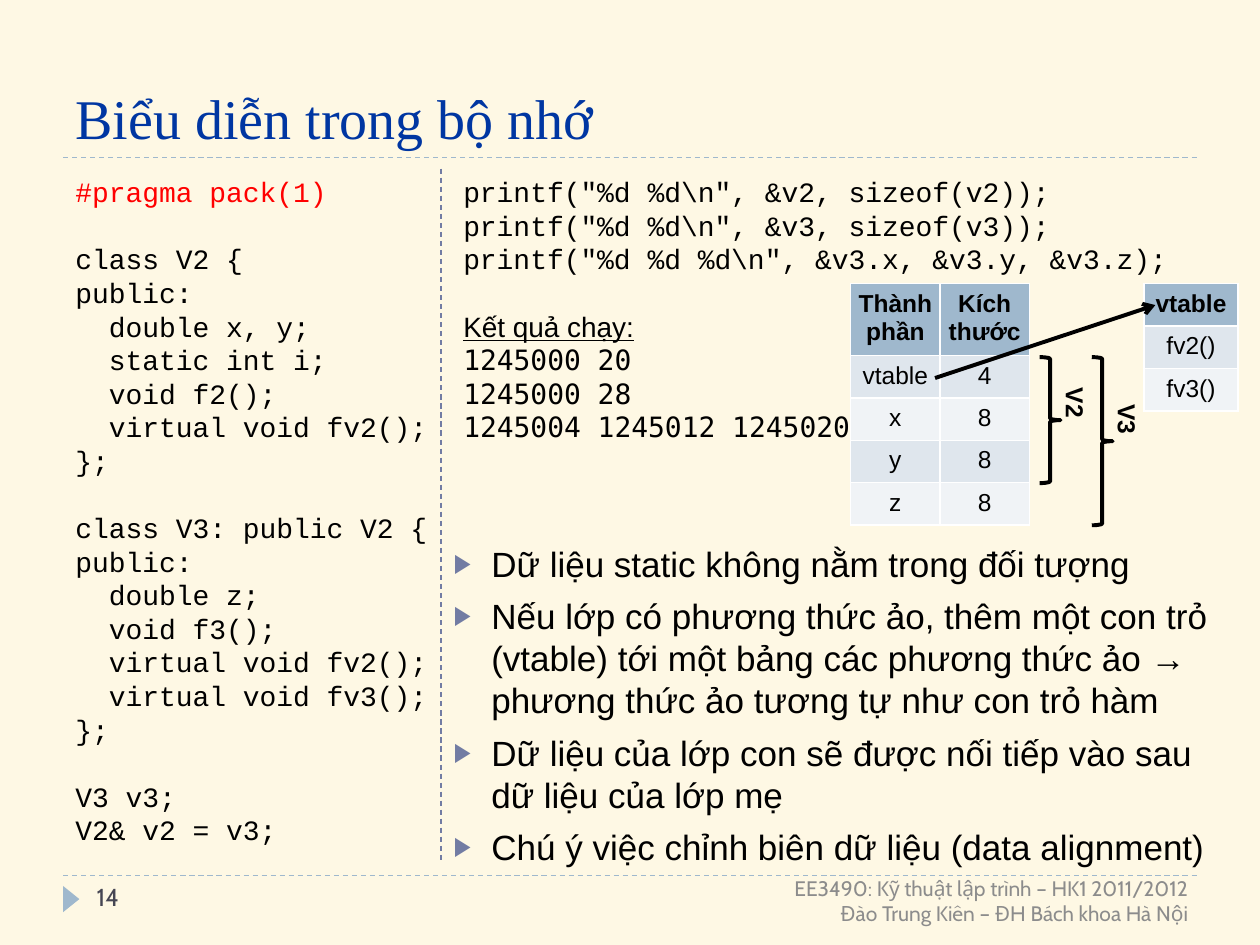
"""Build the slide on the memory layout of C++ objects with virtual methods."""
from lxml import etree
from pptx import Presentation
from pptx.dml.color import RGBColor
from pptx.enum.dml import MSO_LINE
from pptx.enum.shapes import MSO_CONNECTOR, MSO_SHAPE
from pptx.enum.text import MSO_ANCHOR, MSO_AUTO_SIZE, PP_ALIGN
from pptx.oxml.ns import qn
from pptx.util import Cm, Pt

CREAM = RGBColor(0xFE, 0xF8, 0xE4)
NAVY = RGBColor(0x00, 0x36, 0xA2)
BLACK = RGBColor(0x00, 0x00, 0x00)
RED = RGBColor(0xFF, 0x00, 0x00)
SLATE = RGBColor(0x46, 0x46, 0x53)
GRAY = RGBColor(0x8C, 0x8C, 0x8C)
INDIGO = RGBColor(0x72, 0x7C, 0xA3)
BLUE = RGBColor(0x9F, 0xB8, 0xCD)
BANDS = (RGBColor(0xF0, 0xF3, 0xF6), RGBColor(0xDF, 0xE6, 0xED))
DASH = MSO_LINE.DASH
STRAIGHT = MSO_CONNECTOR.STRAIGHT
TRIANGLE = MSO_SHAPE.ISOSCELES_TRIANGLE
BRACE = MSO_SHAPE.RIGHT_BRACE
TOP, MIDDLE, BOTTOM = MSO_ANCHOR.TOP, MSO_ANCHOR.MIDDLE, MSO_ANCHOR.BOTTOM
LEFT, CENTER, RIGHT = PP_ALIGN.LEFT, PP_ALIGN.CENTER, PP_ALIGN.RIGHT
NO_FIT = MSO_AUTO_SIZE.NONE
CODE_PITCH = Pt(19.2)

CLASS_CODE = """#pragma pack(1)

class V2 {
public:
  double x, y;
  static int i;
  void f2();
  virtual void fv2();
};

class V3: public V2 {
public:
  double z;
  void f3();
  virtual void fv2();
  virtual void fv3();
};

V3 v3;
V2& v2 = v3;"""

OUTPUT_CODE = r"""printf("%d %d\n", &v2, sizeof(v2));
printf("%d %d\n", &v3, sizeof(v3));
printf("%d %d %d\n", &v3.x, &v3.y, &v3.z);

Kết quả chạy:
1245000 20
1245000 28
1245004 1245012 1245020"""

NOTES = [
    "Dữ liệu static không nằm trong đối tượng",
    "Nếu lớp có phương thức ảo, thêm một con trỏ (vtable) tới một bảng các "
    "phương thức ảo → phương thức ảo tương tự như con trỏ hàm",
    "Dữ liệu của lớp con sẽ được nối tiếp vào sau dữ liệu của lớp mẹ",
    "Chú ý việc chỉnh biên dữ liệu (data alignment)",
]

prs = Presentation()
prs.slide_width, prs.slide_height = Cm(25.4), Cm(19.05)
slide = prs.slides.add_slide(prs.slide_layouts[1])
slide.background.fill.solid()
slide.background.fill.fore_color.rgb = CREAM


def add_text(box, text, font, size, color, align=LEFT, pitch=None):
    """Add a text box; with a pitch, an empty line becomes space before the next."""
    frame = slide.shapes.add_textbox(*map(Cm, box)).text_frame
    frame.word_wrap = True
    lines = text.split("\n")
    kept = [i for i, line in enumerate(lines) if line]
    frame.text = "\n".join(lines[i] for i in kept)
    for i, paragraph in zip(kept, frame.paragraphs):
        paragraph.alignment = align
        if pitch:
            paragraph.line_spacing = pitch
            if i and not lines[i - 1]:
                paragraph.space_before = pitch
        for run in paragraph.runs:
            run.font.name, run.font.size = font, Pt(size)
            run.font.color.rgb = color
    return frame


def add_line(x1, y1, x2, y2, color, width):
    """Add a straight line without shadow."""
    line = slide.shapes.add_connector(STRAIGHT, Cm(x1), Cm(y1), Cm(x2), Cm(y2))
    line.line.color.rgb = color
    line.line.width = Pt(width)
    etree.SubElement(line._element.spPr, qn("a:effectLst"))
    return line


for rule_y in (17.65, 3.18):
    add_line(1.27, rule_y, 24.13, rule_y, BLUE, 0.75).line.dash_style = DASH

page_marker = slide.shapes.add_shape(TRIANGLE, Cm(1.17), Cm(17.96), Cm(0.53), Cm(0.33))
page_marker.rotation = 90
page_marker.shadow.inherit = False
page_marker.fill.solid()
page_marker.fill.fore_color.rgb = BLUE
page_marker.line.fill.background()

title = slide.shapes.title
title.left, title.top, title.width, title.height = Cm(1.27), Cm(0.43), Cm(22.86), Cm(2.74)
title.text_frame.text = "Biểu diễn trong bộ nhớ"
title.text_frame.vertical_anchor = BOTTOM
title.text_frame.auto_size = NO_FIT
heading = title.text_frame.paragraphs[0]
heading.alignment = LEFT
heading.runs[0].font.name, heading.runs[0].font.size = "Times New Roman", Pt(32)
heading.runs[0].font.color.rgb = NAVY

notes = slide.placeholders[1]
notes.left, notes.top, notes.width, notes.height = Cm(8.89), Cm(10.8), Cm(16.08), Cm(6.3)
notes.text_frame.text = "\n".join(NOTES)
notes.text_frame.vertical_anchor = TOP
notes.text_frame.auto_size = NO_FIT
for i, note in enumerate(notes.text_frame.paragraphs):
    props = note._p.get_or_add_pPr()
    props.set("marL", str(Cm(0.76)))
    props.set("indent", str(-Cm(0.76)))
    bullet_color = etree.SubElement(props, qn("a:buClr"))
    etree.SubElement(bullet_color, qn("a:srgbClr"), val=str(INDIGO))
    etree.SubElement(props, qn("a:buSzPct"), val="76000")
    etree.SubElement(props, qn("a:buChar"), char="▶")
    note.space_before = Pt(6 if i else 0)
    note.line_spacing = Pt(24)
    note.runs[0].font.name, note.runs[0].font.size = "Arial", Pt(20)
    note.runs[0].font.color.rgb = BLACK

page_number = add_text((1.7, 17.65, 5.51, 1.02), "14", "Cabin", 14, SLATE)
footer = add_text((8.69, 17.65, 15.52, 1.02),
                  "EE3490: Kỹ thuật lập trình – HK1 2011/2012\nĐào Trung Kiên – ĐH Bách khoa Hà Nội",
                  "Cabin", 12, GRAY, RIGHT)
footer.vertical_anchor = MIDDLE

class_code = add_text((1.27, 3.4, 7.82, 12.7), CLASS_CODE, "Courier New", 16, BLACK, pitch=CODE_PITCH)
class_code.paragraphs[0].runs[0].font.color.rgb = RED

output_code = add_text((9.09, 3.4, 15.04, 12.7), OUTPUT_CODE, "Courier New", 16, BLACK, pitch=CODE_PITCH)
result_label, *results = [p.runs[0].font for p in output_code.paragraphs[3:]]
result_label.name, result_label.underline = "Arial", True
for result in results:
    result.name = "DejaVu Sans Mono"

add_line(8.89, 3.4, 8.89, 17.35, INDIGO, 0.75).line.dash_style = DASH

MEMBERS = [("Thành phần", "Kích thước"), ("vtable", "4"), ("x", "8"), ("y", "8"), ("z", "8")]
METHODS = [("vtable",), ("fv2()",), ("fv3()",)]
for left, column_width, header_height, rows in (
    (17.15, 1.8, 1.36, MEMBERS),
    (23.06, 1.9, 0.82, METHODS),
):
    columns = len(rows[0])
    table = slide.shapes.add_table(len(rows), columns, Cm(left), Cm(5.72),
                                   Cm(column_width * columns),
                                   Cm(header_height + 0.82 * (len(rows) - 1))).table
    for r, values in enumerate(rows):
        table.rows[r].height = Cm(0.82 if r else header_height)
        for c, value in enumerate(values):
            cell = table.cell(r, c)
            cell.margin_left = cell.margin_right = cell.margin_top = cell.margin_bottom = Cm(0.13)
            cell.fill.solid()
            cell.fill.fore_color.rgb = BANDS[r % 2] if r else BLUE
            cell.text_frame.text = value
            entry = cell.text_frame.paragraphs[0]
            entry.alignment = CENTER
            font = entry.runs[0].font
            font.name, font.size, font.bold = "Arial", Pt(14), r == 0
            font.color.rgb = BLACK

for class_name, brace_left, brace_height, label_top in (
    ("V2", 20.96, 2.54, 7.82),
    ("V3", 22.01, 3.39, 8.15),
):
    brace = slide.shapes.add_shape(BRACE, Cm(brace_left), Cm(7.2), Cm(0.42), Cm(brace_height))
    brace.shadow.inherit = False
    brace.fill.background()
    brace.line.color.rgb = BLACK
    brace.line.width = Pt(2.25)
    label = add_text((brace_left + 0.42, label_top, 0.6, 1.45), class_name, "Arial", 14, BLACK, CENTER)
    label.margin_left = label.margin_right = label.margin_top = label.margin_bottom = 0
    label._txBody.bodyPr.set("vert", "eaVert")
    label.paragraphs[0].runs[0].font.bold = True

pointer = add_line(18.85, 7.62, 23.29, 6.15, BLACK, 2.25)
etree.SubElement(pointer._element.spPr.find(qn("a:ln")), qn("a:tailEnd"), type="arrow")

prs.save("out.pptx")
